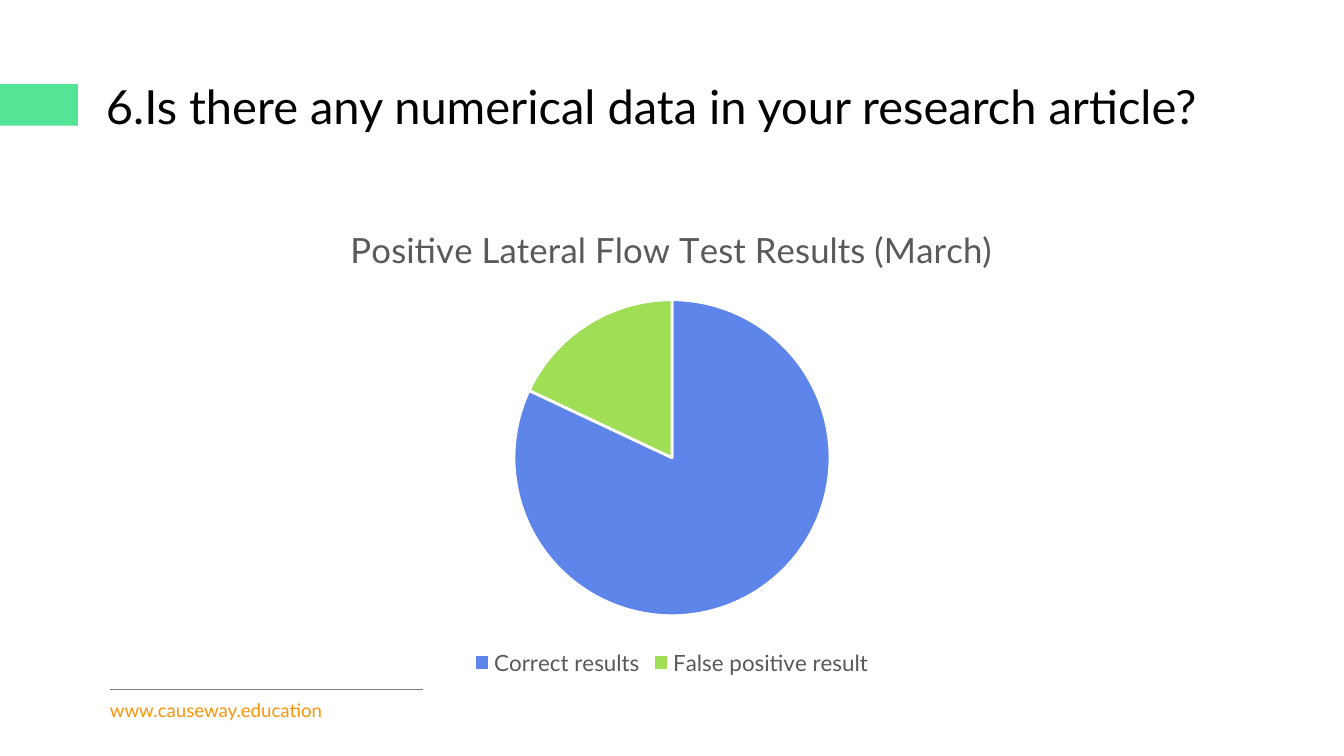
from lxml.etree import SubElement
from pptx import Presentation
from pptx.chart.data import CategoryChartData
from pptx.dml.color import RGBColor
from pptx.enum.chart import XL_CHART_TYPE, XL_LEGEND_POSITION
from pptx.enum.shapes import MSO_CONNECTOR, MSO_SHAPE
from pptx.enum.text import MSO_ANCHOR
from pptx.oxml.ns import qn
from pptx.util import Inches, Pt

W = 10
H = W * 9 / 16
MARGIN = 0.69
CONTENT_W = W - 2 * MARGIN
FONT = "Lato"
COLORS = {
    "accent": "54E495",
    "rule": "808080",
    "link": "FD9409",
    "title": "000000",
    "chart_text": "595959",
    "correct": "5E86EA",
    "false": "9FDE55",
    "border": "FFFFFF",
}


def rgb(name):
    return RGBColor.from_string(COLORS[name])


def style_font(font, size, color):
    font.name = FONT
    font.size = Pt(size)
    font.bold = False
    font.color.rgb = rgb(color)


def add_block(s, x, y, w, h, color):
    sp = s.shapes.add_shape(MSO_SHAPE.RECTANGLE, *map(Inches, (x, y, w, h)))
    sp.shadow.inherit = False
    sp.fill.solid()
    sp.fill.fore_color.rgb = rgb(color)
    sp.line.fill.background()


def add_rule(s, x, y, w, color):
    cxn = s.shapes.add_connector(
        MSO_CONNECTOR.STRAIGHT, *map(Inches, (x, y, x + w, y)))
    cxn.line.color.rgb = rgb(color)
    cxn.line.width = Pt(0.5)
    SubElement(cxn._element.spPr, qn("a:effectLst"))


def add_text(s, x, y, w, h, text, size, color, anchor=MSO_ANCHOR.TOP, spacing=1.0):
    tf = s.shapes.add_textbox(*map(Inches, (x, y, w, h))).text_frame
    tf.word_wrap = True
    tf.vertical_anchor = anchor
    p = tf.paragraphs[0]
    p.text = text
    p.line_spacing = spacing
    style_font(p.font, size, color)


def add_pie(s, x, y, w, h, title, slices):
    data = CategoryChartData()
    data.categories = [name for name, _, _ in slices]
    data.add_series(title, [value for _, value, _ in slices])
    chart = s.shapes.add_chart(
        XL_CHART_TYPE.PIE, *map(Inches, (x, y, w, h)), data).chart
    style_font(chart.font, 10, "title")

    chart.has_title = True
    p = chart.chart_title.text_frame.paragraphs[0]
    p.text = title
    style_font(p.font, 18.6, "chart_text")
    chart.chart_title.include_in_layout = False

    chart.has_legend = True
    chart.legend.position = XL_LEGEND_POSITION.BOTTOM
    chart.legend.include_in_layout = False
    style_font(chart.legend.font, 12, "chart_text")

    plot = chart.plots[0]
    plot.vary_by_categories = True
    for i, (_, _, color) in enumerate(slices):
        fmt = plot.series[0].points[i].format
        fmt.fill.solid()
        fmt.fill.fore_color.rgb = rgb(color)
        fmt.line.color.rgb = rgb("border")
        fmt.line.width = Pt(1.5)


def main():
    prs = Presentation()
    prs.slide_width, prs.slide_height = Inches(W), Inches(H)
    s = prs.slides.add_slide(prs.slide_layouts[6])

    add_block(s, 0, H / 9, 0.58, 0.31, "accent")
    add_rule(s, 0.82, 5.13, 2.33, "rule")
    add_text(s, 0.72, 5.15, W / 2, 0.27, "www.causeway.education", 10, "link")
    add_text(s, MARGIN, 0.37, CONTENT_W, 0.89,
             "6.Is there any numerical data in your research article?",
             25.2, "title", MSO_ANCHOR.MIDDLE, 0.9)
    add_pie(s, MARGIN, 1.5, CONTENT_W, 3.57,
            "Positive Lateral Flow Test Results (March)",
            [("Correct results", 82, "correct"),
             ("False positive result", 18, "false")])

    prs.save("out.pptx")


if __name__ == "__main__":
    main()
